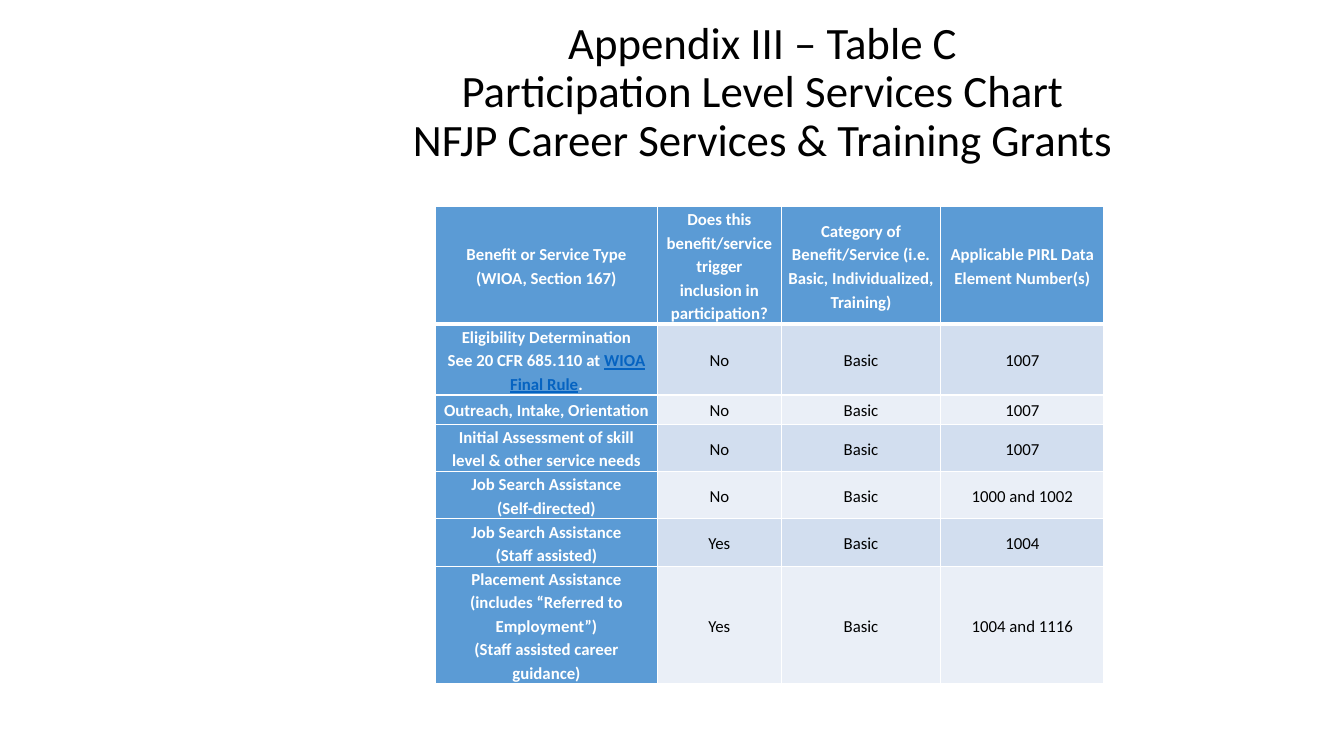
from lxml import etree
from pptx import Presentation
from pptx.dml.color import RGBColor
from pptx.enum import text
from pptx.oxml.ns import qn
from pptx.util import Inches, Pt

FONT = "Calibri"
BLACK = RGBColor(0x00, 0x00, 0x00)
WHITE = RGBColor(0xFF, 0xFF, 0xFF)
BLUE = RGBColor(0x5B, 0x9B, 0xD5)
LINK_BLUE = RGBColor(0x05, 0x63, 0xC1)
BANDS = (RGBColor(0xD2, 0xDE, 0xEF), RGBColor(0xEA, 0xEF, 0xF7))

TITLE = ("Appendix III – Table C\v"
         "Participation Level Services Chart\v"
         "NFJP Career Services & Training Grants")
LINK_TEXT = "WIOA Final Rule"
COLUMN_WIDTHS = (2.2, 1.23, 1.58, 1.62)
ROW_HEIGHTS = (1.16, 0.7, 0.29, 0.47, 0.47, 0.47, 1.16)
SERVICES = (
    ("Benefit or Service Type\n(WIOA, Section 167)",
     "Does this benefit/service trigger inclusion in participation?",
     "Category of Benefit/Service (i.e. Basic, Individualized, Training)",
     "Applicable PIRL Data Element Number(s)"),
    ("Eligibility Determination\nSee 20 CFR 685.110 at WIOA Final Rule.", "No", "Basic", "1007"),
    ("Outreach, Intake, Orientation", "No", "Basic", "1007"),
    ("Initial Assessment of skill level & other service needs", "No", "Basic", "1007"),
    ("Job Search Assistance\n(Self-directed)", "No", "Basic", "1000 and 1002"),
    ("Job Search Assistance\n(Staff assisted)", "Yes", "Basic", "1004"),
    ("Placement Assistance\v(includes “Referred to Employment”)\n(Staff assisted career guidance)",
     "Yes", "Basic", "1004 and 1116"),
)


def format_paragraph(paragraph, size, color, spacing, bold=False):
    paragraph.alignment = text.PP_ALIGN.CENTER
    paragraph.line_spacing = spacing
    font = paragraph.font
    font.name, font.size, font.bold = FONT, Pt(size), bold
    font.color.rgb = color


def add_title(slide):
    title = slide.shapes.title
    title.left, title.top = Inches(2.14), Inches(0.2)
    title.width, title.height = Inches(10.85), Inches(1.45)
    frame = title.text_frame
    frame.text = TITLE
    frame.word_wrap = True
    frame.auto_size = text.MSO_AUTO_SIZE.NONE
    frame.vertical_anchor = text.MSO_ANCHOR.MIDDLE
    format_paragraph(frame.paragraphs[0], 32, BLACK, 0.9)


def set_borders(cell, widths):
    """Draw white borders; widths maps a side (L, R, T, B) to points."""
    properties = cell._tc.get_or_add_tcPr()
    for index, (side, width) in enumerate(widths.items()):
        line = etree.Element(qn(f"a:ln{side}"), w=str(Pt(width)))
        fill = etree.SubElement(line, qn("a:solidFill"))
        etree.SubElement(fill, qn("a:srgbClr"), val=str(WHITE))
        properties.insert(index, line)


def write_paragraph(paragraph, words):
    """Write the words, with the rule's name styled as a link."""
    before, link, after = words.partition(LINK_TEXT)
    if not link:
        paragraph.text = words
        return
    for part in (before, link, after):
        run = paragraph.add_run()
        run.text = part
        if part == link:
            run.font.underline = True
            run.font.color.rgb = LINK_BLUE


def fill_cell(cell, words, fill, color, bold):
    cell.fill.solid()
    cell.fill.fore_color.rgb = fill
    cell.vertical_anchor = text.MSO_ANCHOR.MIDDLE
    cell.margin_left = cell.margin_right = Inches(0.07)
    cell.margin_top = cell.margin_bottom = 0
    frame = cell.text_frame
    for index, line in enumerate(words.split("\n")):
        paragraph = frame.add_paragraph() if index else frame.paragraphs[0]
        write_paragraph(paragraph, line)
        format_paragraph(paragraph, 12, color, 1.15, bold)


def add_services_table(slide):
    table = slide.shapes.add_table(
        len(SERVICES), len(COLUMN_WIDTHS), Inches(4.32), Inches(2.05),
        Inches(sum(COLUMN_WIDTHS)), Inches(sum(ROW_HEIGHTS))).table
    for column, width in zip(table.columns, COLUMN_WIDTHS):
        column.width = Inches(width)
    for row, height in zip(table.rows, ROW_HEIGHTS):
        row.height = Inches(height)
    for row_index, service in enumerate(SERVICES):
        for column_index, words in enumerate(service):
            cell = table.cell(row_index, column_index)
            if row_index == 0 or column_index == 0:
                fill_cell(cell, words, BLUE, WHITE, True)
            else:
                fill_cell(cell, words, BANDS[(row_index - 1) % 2], BLACK, False)
            set_borders(cell, {"L": 1, "R": 1, "T": 3 if row_index == 1 else 1,
                               "B": 3 if row_index == 0 else 1})


def main():
    presentation = Presentation()
    presentation.slide_width, presentation.slide_height = Inches(13.33), Inches(7.5)
    slide = presentation.slides.add_slide(presentation.slide_layouts.get_by_name("Title Only"))
    add_title(slide)
    add_services_table(slide)
    presentation.save("out.pptx")


if __name__ == "__main__":
    main()
